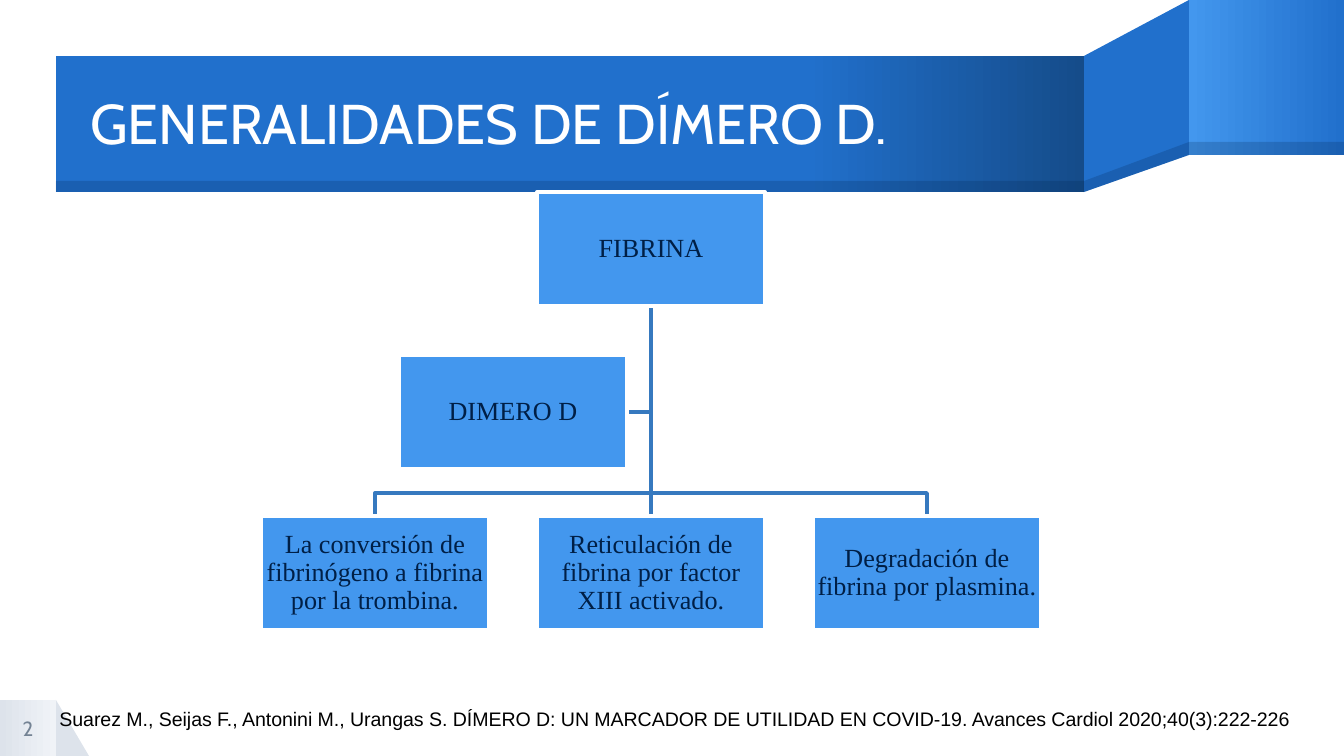
from typing import NamedTuple, Optional

from lxml import etree
from pptx import Presentation
from pptx import util as u
from pptx.dml import color
from pptx.enum import shapes as kinds, text
from pptx.oxml import ns

PX = 914400 / 134.4
NAVY, BLUE, SKY, DEEP = "001F46", "2170CC", "4397EE", "154C8A"
WHITE, LINK, MIST, PALE = "FFFFFF", "3679BF", "DDE3EB", "F0F3F7"
RECT = kinds.MSO_SHAPE.RECTANGLE
LEFT, MID, RIGHT = text.PP_ALIGN.LEFT, text.PP_ALIGN.CENTER, text.PP_ALIGN.RIGHT


class Box(NamedTuple):
    x: int
    y: int
    w: int
    h: int


class Paint(NamedTuple):
    main: str
    end: Optional[str] = None    # last colour of a gradient
    start: int = 0               # percent where the gradient begins
    alpha: int = 100


class Style(NamedTuple):
    font: str
    size: float
    hue: str
    align: text.PP_ALIGN
    lead: float = 1.0


class Node(NamedTuple):
    x: int
    y: int
    label: str


def px(n: int) -> u.Emu:
    return u.Emu(round(n * PX))


def rgb(hue: str) -> color.RGBColor:
    return color.RGBColor.from_string(hue)


def fill(shape, paint: Paint) -> None:
    shape.shadow.inherit = False
    shape.line.fill.background()
    if paint.end:
        shape.fill.gradient()
        shape.fill.gradient_angle = 0
        hues = ((paint.main, paint.start), (paint.end, 100))
        for stop, (hue, at) in zip(shape.fill.gradient_stops, hues):
            stop.color.rgb = rgb(hue)
            stop.position = at / 100
        return
    shape.fill.solid()
    shape.fill.fore_color.rgb = rgb(paint.main)
    if paint.alpha < 100:
        tone = shape.fill._xPr.find(".//" + ns.qn("a:srgbClr"))
        etree.SubElement(tone, ns.qn("a:alpha"), val=str(paint.alpha * 1000))


def block(page, box: Box, paint: Paint, kind=RECT):
    shape = page.shapes.add_shape(kind, *map(px, box))
    fill(shape, paint)
    return shape


def trace(page, dots: list[tuple[int, int]], close: bool):
    first, *rest = [(px(x), px(y)) for x, y in dots]
    path = page.shapes.build_freeform(*first, scale=1.0)
    path.add_line_segments(rest, close=close)
    return path.convert_to_shape()


def stroke(shape, hue: str) -> None:
    shape.line.color.rgb = rgb(hue)
    shape.line.width = u.Pt(2)


def link(page, dots: list[tuple[int, int]]) -> None:
    if len(dots) == 2:
        ends = [px(n) for dot in dots for n in dot]
        line = page.shapes.add_connector(kinds.MSO_CONNECTOR.STRAIGHT, *ends)
        stroke(line, LINK)
        etree.SubElement(line._element.spPr, ns.qn("a:effectLst"))
    else:
        line = trace(page, dots, False)
        line.shadow.inherit = False
        line.fill.background()
        stroke(line, LINK)


def write(shape, words: str, style: Style, pad: tuple[int, int],
          anchor=text.MSO_ANCHOR.MIDDLE) -> None:
    frame = shape.text_frame
    side, edge = map(px, pad)
    looks = {"word_wrap": True, "vertical_anchor": anchor,
             "margin_left": side, "margin_right": side,
             "margin_top": edge, "margin_bottom": edge}
    for name, value in looks.items():
        setattr(frame, name, value)
    para = frame.paragraphs[0]
    para.alignment, para.line_spacing = style.align, style.lead
    run = para.add_run()
    run.text = words
    for name, value in {"name": style.font, "size": u.Pt(style.size)}.items():
        setattr(run.font, name, value)
    run.font.color.rgb = rgb(style.hue)


def label(page, box: Box, words: str, style: Style, pad=(0, 0), **more) -> None:
    write(page.shapes.add_textbox(*map(px, box)), words, style, pad, **more)


def banner(page) -> None:
    # Corner tab for the page number
    block(page, Box(56, 700, 33, 56), Paint(MIST), kinds.MSO_SHAPE.RIGHT_TRIANGLE)
    block(page, Box(0, 700, 56, 56), Paint(MIST, PALE))
    # Folded ribbon, then its shaded lower edge
    shade = Paint(NAVY, alpha=20)
    fill(trace(page, [(1189, 0), (1084, 56), (1084, 192), (1189, 155)], True),
         Paint(BLUE))
    block(page, Box(1189, 0, 155, 155), Paint(SKY, BLUE))
    block(page, Box(56, 56, 1028, 136), Paint(BLUE, DEEP, 73))
    fill(trace(page, [(1189, 142), (1084, 181), (1084, 192), (1189, 155)], True),
         shade)
    block(page, Box(1189, 142, 155, 13), shade)
    block(page, Box(56, 181, 1028, 11), shade)


def chart(page) -> None:
    wide, high, step, axis = 228, 114, 276, 651
    top, mid, low, bar = 192, 355, 516, 493
    foot = top + high
    leaves = ["La conversión de fibrinógeno a fibrina por la trombina.",
              "Reticulación de fibrina por factor XIII activado.",
              "Degradación de fibrina por plasmina."]
    nodes = [Node(axis, top, "FIBRINA")]
    nodes += [Node(axis + (i - 1) * step, low, words)
              for i, words in enumerate(leaves)]
    nodes.append(Node(axis - step // 2, mid, "DIMERO D"))

    # Links lie under the boxes
    side = mid + high // 2
    link(page, [(axis, foot), (axis, side), (axis - step // 2 + wide // 2, side)])
    for node in nodes[1:4]:
        if node.x == axis:
            link(page, [(axis, foot), (axis, low)])
        else:
            link(page, [(axis, foot), (axis, bar), (node.x, bar), (node.x, low)])

    # Boxes
    style = Style("Times New Roman", 14, NAVY, MID, 0.9)
    for node in nodes:
        shape = block(page, Box(node.x - wide // 2, node.y, wide, high), Paint(SKY))
        stroke(shape, WHITE)
        write(shape, node.label, style, (1, 1))


def main() -> None:
    deck = Presentation()
    deck.slide_width, deck.slide_height = px(1344), px(756)
    page = deck.slides.add_slide(deck.slide_layouts[6])
    banner(page)

    # Title and page number
    label(page, Box(90, 58, 993, 136), "GENERALIDADES DE DÍMERO D.",
          Style("Cabin", 30, WHITE, LEFT, 0.9))
    label(page, Box(0, 700, 56, 56), "2", Style("Cabin", 11, "748394", MID))
    chart(page)

    # Reference
    label(page, Box(0, 700, 1310, 38),
          "Suarez M., Seijas F., Antonini M., Urangas S. DÍMERO D: UN MARCADOR DE "
          "UTILIDAD EN COVID-19. Avances Cardiol 2020;40(3):222-226 ",
          Style("Arial", 10.5, "000000", RIGHT), (13, 7),
          anchor=text.MSO_ANCHOR.TOP)
    deck.save("out.pptx")


if __name__ == "__main__":
    main()
